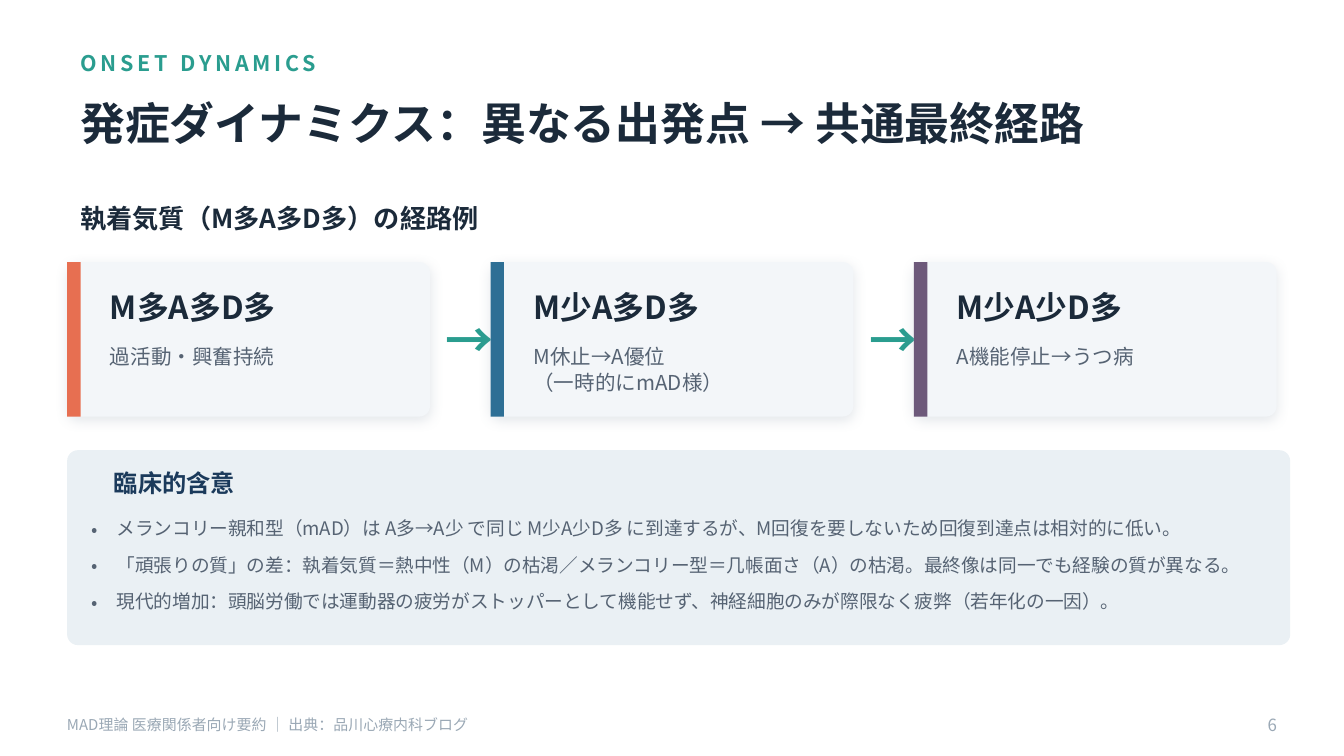
import pptx
import pptx.dml.color
import pptx.enum.shapes
import pptx.enum.text
import pptx.oxml
import pptx.oxml.ns
import pptx.util
from lxml import etree

Inches = pptx.util.Inches
Pt = pptx.util.Pt
RGB = pptx.dml.color.RGBColor.from_string
Shape = pptx.enum.shapes.MSO_SHAPE
Align = pptx.enum.text.PP_ALIGN
Anchor = pptx.enum.text.MSO_ANCHOR
qn = pptx.oxml.ns.qn


class Theme:
    font = "Noto Sans CJK JP"
    ink, body, mute = "1B2A3A", "566373", "9AA8B5"
    teal, navy = "2A9D8F", "1B3A5B"
    card, panel, shade = "F3F6F9", "EAF0F4", "8595A5"
    tag = dict(size=11.5, color=teal, bold=True)
    title = dict(size=24, color=ink, bold=True)
    lead = dict(size=14, color=ink, bold=True)
    state = dict(size=17, color=ink, bold=True)
    note = dict(size=11, color=body)
    arrow = dict(size=26, color=teal, bold=True)
    head = dict(size=13, color=navy, bold=True)
    point = dict(size=10, color=body)
    foot = dict(size=8, color=mute)
    page = dict(size=9, color=mute)


STEPS = [
    ("M多A多D多", ["過活動・興奮持続"], "E76F51"),
    ("M少A多D多", ["M休止→A優位", "（一時的にmAD様）"], "2E6F95"),
    ("M少A少D多", ["A機能停止→うつ病"], "6D597A"),
]
POINTS = [
    "メランコリー親和型（mAD）は A多→A少 で同じ M少A少D多 に到達するが、M回復を要しないため回復到達点は相対的に低い。",
    "「頑張りの質」の差：執着気質＝熱中性（M）の枯渇／メランコリー型＝几帳面さ（A）の枯渇。最終像は同一でも経験の質が異なる。",
    "現代的増加：頭脳労働では運動器の疲労がストッパーとして機能せず、神経細胞のみが際限なく疲弊（若年化の一因）。",
]


def place(box):
    return [Inches(n) for n in box]


def write(slide, box, lines, style, anchor=Anchor.MIDDLE, track=0, bullet=False, **form):
    frame = slide.shapes.add_textbox(*place(box)).text_frame
    frame.word_wrap = True
    frame.vertical_anchor = anchor
    for i, line in enumerate(lines):
        para = frame.paragraphs[0] if i == 0 else frame.add_paragraph()
        for key, value in form.items():
            setattr(para, key, value)
        if bullet:
            props = para._p.get_or_add_pPr()
            props.set("marL", str(Inches(0.19)))
            props.set("indent", str(Inches(-0.19)))
            etree.SubElement(props, qn("a:buFont")).set("typeface", Theme.font)
            etree.SubElement(props, qn("a:buChar")).set("char", "•")
        run = para.add_run()
        run.text = line
        run.font.size = Pt(style["size"])
        run.font.bold = style.get("bold", False)
        run.font.color.rgb = RGB(style["color"])
        run.font.name = Theme.font
        props = run._r.get_or_add_rPr()
        etree.SubElement(props, qn("a:ea")).set("typeface", Theme.font)
        if track:
            props.set("spc", str(track * 100))


def block(slide, box, color, round=0):
    kind = Shape.ROUNDED_RECTANGLE if round else Shape.RECTANGLE
    shape = slide.shapes.add_shape(kind, *place(box))
    shape.shadow.inherit = False
    shape.fill.solid()
    shape.fill.fore_color.rgb = RGB(color)
    shape.line.fill.background()
    if round:
        shape.adjustments[0] = round
    return shape


def shade(shape):
    effects = shape._element.spPr.find(qn("a:effectLst"))
    drop = etree.SubElement(effects, qn("a:outerShdw"))
    for key, value in dict(blurRad=Pt(7), dist=Pt(2), dir=90 * 60000, rotWithShape=0).items():
        drop.set(key, str(value))
    tint = etree.SubElement(drop, qn("a:srgbClr"))
    tint.set("val", Theme.shade)
    etree.SubElement(tint, qn("a:alpha")).set("val", "22000")


def header(slide, box):
    x, y, w, h = box
    write(slide, (x, y, w - 0.1, 0.3), ["ONSET DYNAMICS"], Theme.tag, track=2)
    write(slide, (x, y + 0.26, w, 0.66), ["発症ダイナミクス：異なる出発点 → 共通最終経路"], Theme.title)
    write(slide, (x, y + h - 0.35, w - 0.1, 0.35), ["執着気質（M多A多D多）の経路例"], Theme.lead)


def card(slide, box, state, notes, color):
    x, y, w, h = box
    shade(block(slide, box, Theme.card, 0.07))
    block(slide, (x, y, 0.1, h), color)
    write(slide, (x + 0.22, y + 0.11, w - 0.3, 0.45), [state], Theme.state)
    write(slide, (x + 0.22, y + 0.55, w - 0.3, 0.55), notes, Theme.note,
          Anchor.TOP, line_spacing=1.05)


def flow(slide, box):
    x, y, w, h = box
    gap = 0.45
    wide = (w - gap * (len(STEPS) - 1)) / len(STEPS)
    for i, step in enumerate(STEPS):
        left = x + i * (wide + gap)
        if i:
            write(slide, (left - gap + 0.02, y, gap - 0.02, h), ["→"], Theme.arrow,
                  alignment=Align.CENTER)
        card(slide, (left, y, wide, h), *step)


def panel(slide, box):
    x, y, w, h = box
    block(slide, box, Theme.panel, 0.055)
    write(slide, (x + 0.25, y + 0.07, w - 0.1, 0.35), ["臨床的含意"], Theme.head)
    write(slide, (x + 0.08, y + 0.43, w - 0.11, h - 0.5), POINTS, Theme.point,
          Anchor.TOP, bullet=True, line_spacing=1.12, space_after=Pt(6))


def footer(slide, box):
    x, y, w, h = box
    write(slide, (x, y, 7.6, h), ["MAD理論 医療関係者向け要約 ｜ 出典：品川心療内科ブログ"], Theme.foot)
    write(slide, (x + w - 0.5, y, 0.5, h), ["6"], Theme.page, alignment=Align.RIGHT)


def main():
    deck = pptx.Presentation()
    deck.slide_width = Inches(10)
    deck.slide_height = Inches(10 * 9 / 16)
    slide = deck.slides.add_slide(deck.slide_layouts[6])
    header(slide, (0.5, 0.32, 9.1, 1.48))
    flow(slide, (0.5, 1.95, 9, 1.15))
    panel(slide, (0.5, 3.35, 9.1, 1.45))
    footer(slide, (0.4, 5.24, 9.2, 0.3))
    deck.save("out.pptx")


if __name__ == "__main__":
    main()
